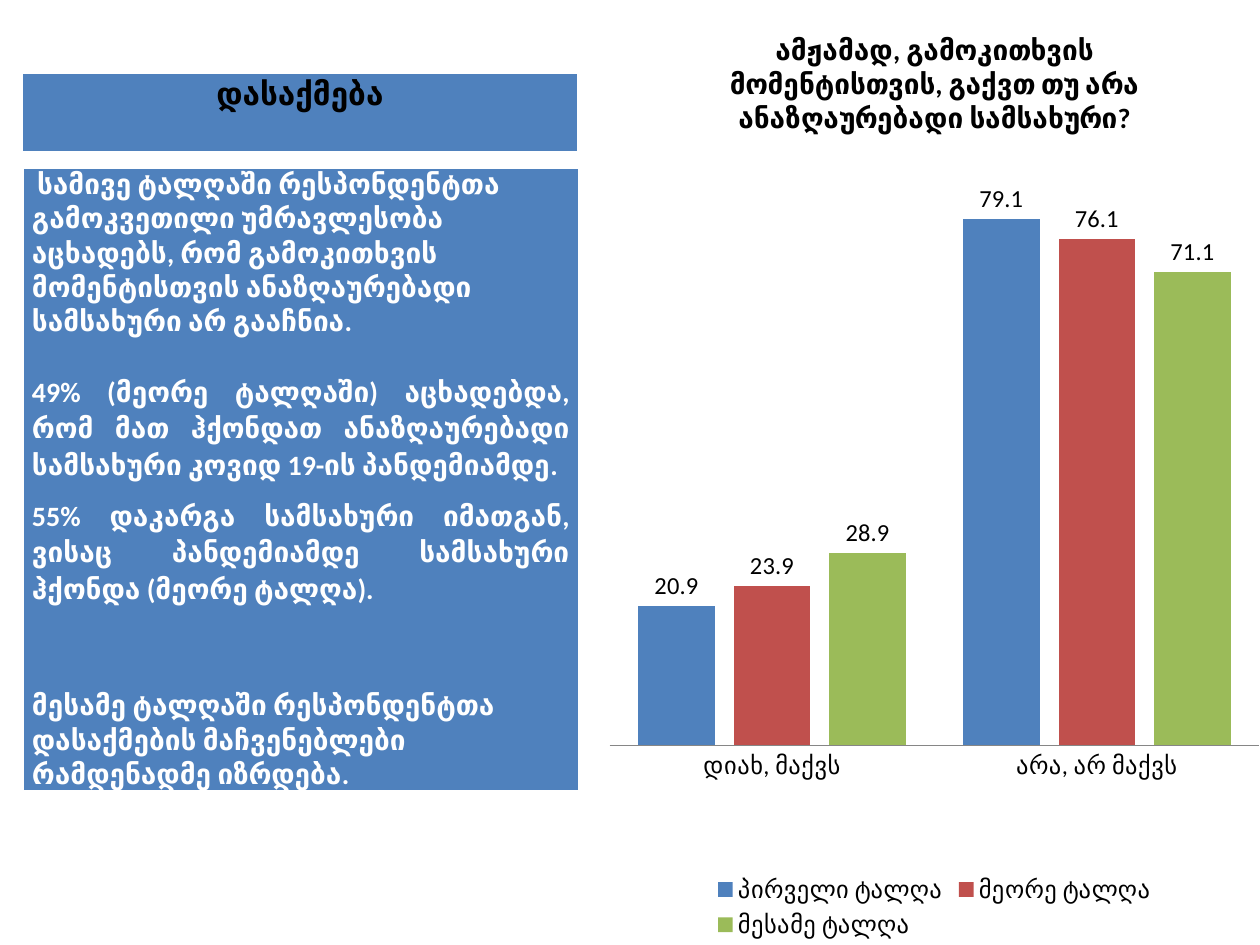
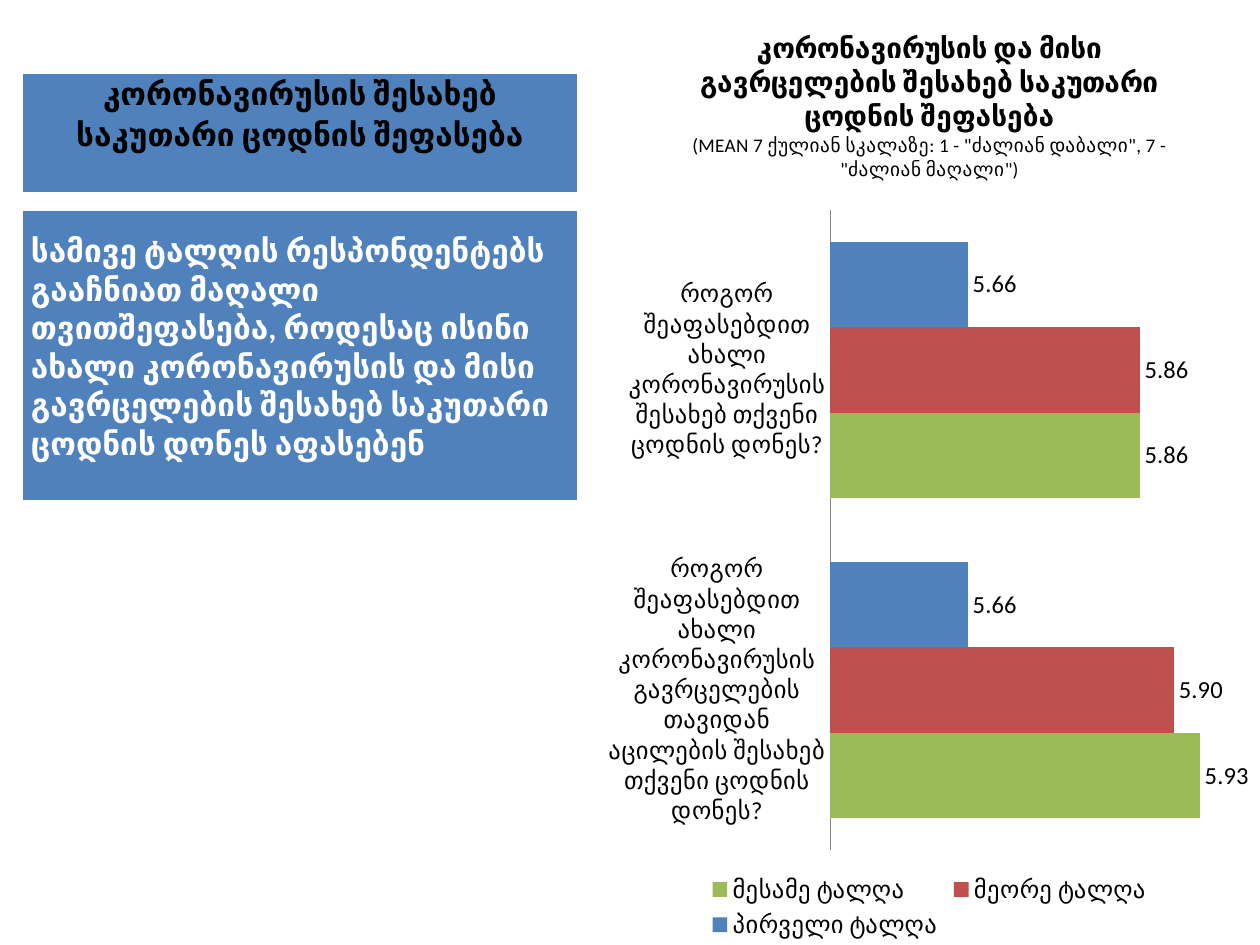
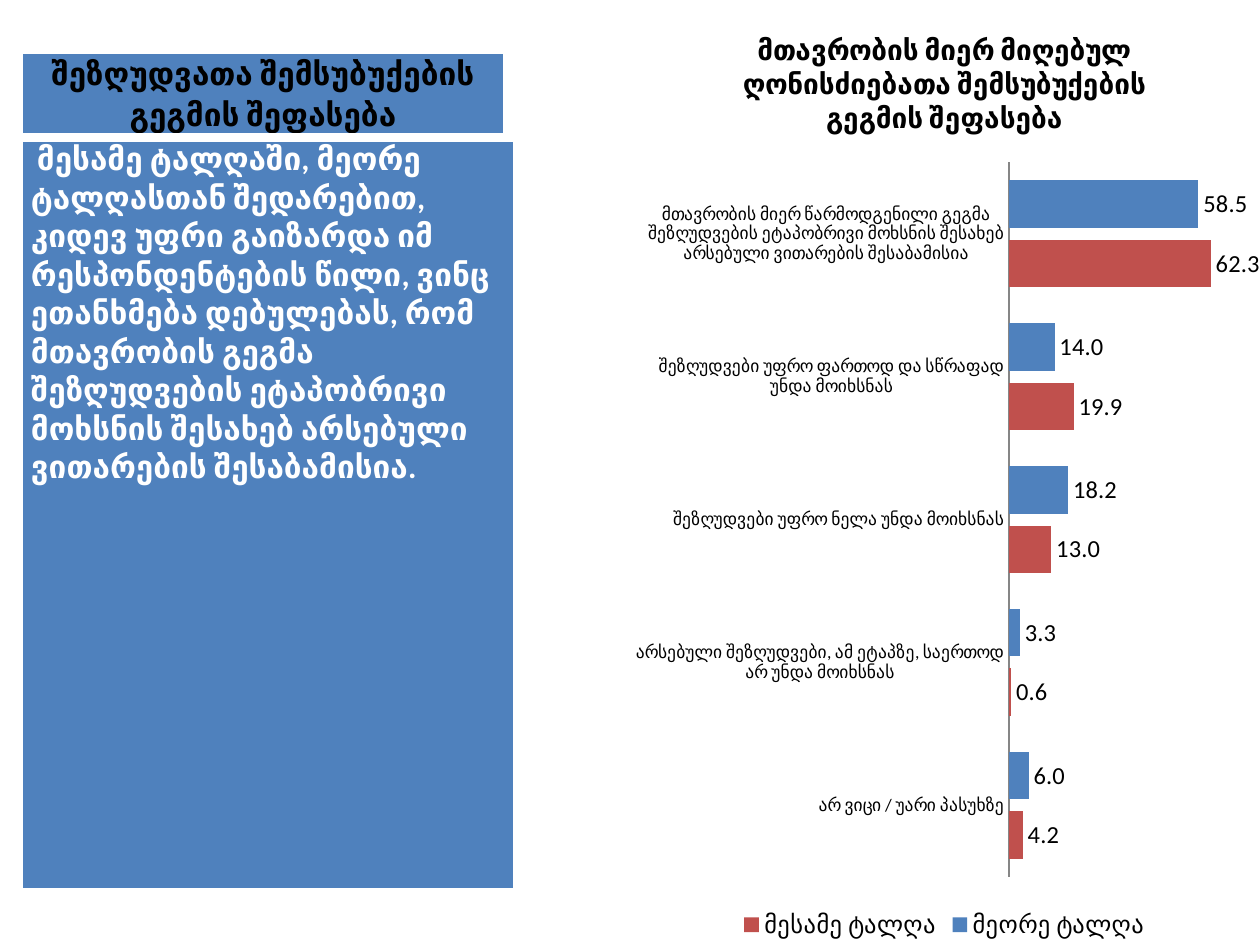
from pptx import Presentation
from pptx.chart.data import CategoryChartData
from pptx.dml.color import RGBColor
from pptx.enum.chart import (XL_CHART_TYPE, XL_LABEL_POSITION, XL_LEGEND_POSITION,
                             XL_TICK_LABEL_POSITION, XL_TICK_MARK)
from pptx.enum.text import PP_ALIGN
from pptx.oxml import parse_xml
from pptx.oxml.ns import nsdecls
from pptx.util import Emu, Pt

FONT = "Calibri"
BLUE, RED, GREEN = "4F81BD", "C0504D", "9BBB59"
BLACK, WHITE, GREY = "000000", "FFFFFF", "868686"
WAVES = {"პირველი ტალღა": BLUE, "მეორე ტალღა": RED, "მესამე ტალღა": GREEN}
EDGES = {"L": 1, "R": 1, "T": 1, "B": 3}


def px(n):
    return Emu(round(n * 914400 / 126))


def rgb(code):
    return RGBColor.from_string(code)


def style(font, size, color, bold=False):
    font.name, font.size, font.bold = FONT, Pt(size), bold
    font.color.rgb = rgb(color)


def add_cell(slide, box, top=0):
    """Add a one-cell blue table with white edges and return its text frame."""
    table = slide.shapes.add_table(1, 1, *map(px, box)).table
    table.first_row = table.horz_banding = False
    cell = table.cell(0, 0)
    props = cell._tc.get_or_add_tcPr()
    for side, width in EDGES.items():
        props.append(parse_xml(
            f'<a:ln{side} {nsdecls("a")} w="{Pt(width)}"><a:solidFill>'
            f'<a:srgbClr val="{WHITE}"/></a:solidFill></a:ln{side}>'))
    cell.fill.solid()
    cell.fill.fore_color.rgb = rgb(BLUE)
    cell.margin_left = cell.margin_right = px(9)
    cell.margin_top, cell.margin_bottom = px(top), 0
    return cell.text_frame


def add_head(slide, box, text):
    para = add_cell(slide, box).paragraphs[0]
    para.text = text
    para.alignment, para.line_spacing = PP_ALIGN.CENTER, 1.07
    style(para.runs[0].font, 18, BLACK, True)


def add_body(slide, box, items, size, top=0, indent=0):
    """Items are (text, justified, points before)."""
    frame = add_cell(slide, box, top)
    for i, (text, wide, before) in enumerate(items):
        para = frame.add_paragraph() if i else frame.paragraphs[0]
        para.text = text
        para.space_before = Pt(before)
        if wide:
            para.alignment, para.line_spacing = PP_ALIGN.JUSTIFY, 1.07
            para.space_after = Pt(8)
        style(para.runs[0].font, size, WHITE, True)
    if indent:
        frame.paragraphs[0]._p.get_or_add_pPr().set("indent", str(px(indent)))


def set_plot(chart, area):
    """Fix the inner plot area, given as fractions of the chart."""
    plot = chart.element.xpath("c:chart/c:plotArea")[0]
    for old in plot.xpath("c:layout"):
        plot.remove(old)
    sizes = "".join(f'<c:{k} val="{v}"/>' for k, v in zip("xywh", area))
    plot.insert(0, parse_xml(
        f'<c:layout {nsdecls("c")}><c:manualLayout><c:layoutTarget val="inner"/>'
        f'<c:xMode val="edge"/><c:yMode val="edge"/>{sizes}'
        '</c:manualLayout></c:layout>'))


def set_title(chart, title, note):
    frame = chart.chart_title.text_frame
    frame.text = title
    style(frame.paragraphs[0].runs[0].font, 16, BLACK, True)
    if note:
        para = frame.add_paragraph()
        para.text = note
        style(para.runs[0].font, 11, BLACK)


def set_axes(chart, low, high, rev, small, line):
    axis = chart.category_axis
    axis.major_tick_mark = axis.minor_tick_mark = XL_TICK_MARK.NONE
    axis.has_major_gridlines = False
    axis.reverse_order = rev
    axis.format.line.color.rgb = rgb(GREY)
    axis.format.line.width = Pt(line)
    style(axis.tick_labels.font, small, BLACK)
    scale = chart.value_axis
    scale.minimum_scale, scale.maximum_scale = low, high
    scale.has_major_gridlines = False
    scale.tick_label_position = XL_TICK_LABEL_POSITION.NONE
    scale.visible = False


def add_bars(slide, left, kind, title, cats, rows, colors, area, low, high,
             note="", form="###0.0", overlap=0, small=14, line=0.75):
    data = CategoryChartData(number_format=form)
    data.categories = cats
    for name, vals in rows.items():
        data.add_series(name, vals)
    chart = slide.shapes.add_chart(kind, px(left), 0, px(1260 - left), px(945), data).chart
    style(chart.font, 14, BLACK)
    set_title(chart, title, note)
    set_axes(chart, low, high, kind == XL_CHART_TYPE.BAR_CLUSTERED, small, line)
    set_plot(chart, area)
    chart.has_legend = True
    chart.legend.position = XL_LEGEND_POSITION.BOTTOM
    chart.legend.include_in_layout = False
    style(chart.legend.font, 14, BLACK)
    plot = chart.plots[0]
    plot.vary_by_categories = False
    plot.gap_width, plot.overlap = 75, overlap
    for row in plot.series:
        row.invert_if_negative = False
        row.format.fill.solid()
        row.format.fill.fore_color.rgb = rgb(colors[row.name])
        labels = row.data_labels
        labels.show_value = True
        labels.number_format, labels.number_format_is_linked = form, False
        labels.position = XL_LABEL_POSITION.OUTSIDE_END
        style(labels.font, 14, BLACK)


def add_jobs(slide):
    add_bars(slide, 609, XL_CHART_TYPE.COLUMN_CLUSTERED,
             "ამჟამად, გამოკითხვის მომენტისთვის, გაქვთ თუ არა ანაზღაურებადი სამსახური?",
             ["დიახ, მაქვს", "არა, არ მაქვს"],
             dict(zip(WAVES, [(20.9, 79.1), (23.9, 76.1), (28.9, 71.1)])),
             WAVES, (0, 0.155, 1, 0.634), 0, 90, overlap=-25)
    add_head(slide, (22, 73, 556, 80), "დასაქმება")
    add_body(slide, (23, 168, 556, 621), [
        ("სამივე ტალღაში რესპონდენტთა გამოკვეთილი უმრავლესობა აცხადებს, რომ "
         "გამოკითხვის მომენტისთვის ანაზღაურებადი სამსახური არ გააჩნია.", False, 0),
        ("49% (მეორე ტალღაში) აცხადებდა, რომ მათ ჰქონდათ ანაზღაურებადი სამსახური "
         "კოვიდ 19-ის პანდემიამდე.", True, 19.5),
        ("55% დაკარგა სამსახური იმათგან, ვისაც პანდემიამდე სამსახური ჰქონდა "
         "(მეორე ტალღა).", True, 0),
        ("მესამე ტალღაში რესპონდენტთა დასაქმების მაჩვენებლები რამდენადმე იზრდება.",
         False, 19.5 * 2),
    ], 16, indent=5)


def add_skill(slide):
    add_bars(slide, 599, XL_CHART_TYPE.BAR_CLUSTERED,
             "კორონავირუსის და მისი გავრცელების შესახებ საკუთარი ცოდნის შეფასება",
             ["როგორ შეაფასებდით ახალი კორონავირუსის შესახებ თქვენი ცოდნის დონეს?",
              "როგორ შეაფასებდით ახალი კორონავირუსის გავრცელების თავიდან აცილების "
              "შესახებ თქვენი ცოდნის დონეს?"],
             dict(zip(WAVES, [(5.66, 5.66), (5.86, 5.90), (5.86, 5.93)])),
             WAVES, (0.35, 0.222, 0.65, 0.678), 5.5, 6, form="###0.00",
             note='(MEAN 7 ქულიან სკალაზე: 1 - "ძალიან დაბალი", 7 - "ძალიან მაღალი")')
    add_head(slide, (22, 73, 556, 121), "კორონავირუსის შესახებ საკუთარი ცოდნის შეფასება")
    add_body(slide, (22, 210, 556, 292), [
        ("სამივე ტალღის რესპონდენტებს გააჩნიათ მაღალი თვითშეფასება, როდესაც ისინი "
         "ახალი კორონავირუსის და მისი გავრცელების შესახებ საკუთარი ცოდნის დონეს "
         "აფასებენ", False, 0),
    ], 18, top=23)


def add_plan(slide):
    add_bars(slide, 630, XL_CHART_TYPE.BAR_CLUSTERED,
             "მთავრობის მიერ მიღებულ ღონისძიებათა შემსუბუქების გეგმის შეფასება",
             ["მთავრობის მიერ წარმოდგენილი გეგმა შეზღუდვების ეტაპობრივი მოხსნის "
              "შესახებ არსებული ვითარების შესაბამისია",
              "შეზღუდვები უფრო ფართოდ და სწრაფად უნდა მოიხსნას",
              "შეზღუდვები უფრო ნელა უნდა მოიხსნას",
              "არსებული შეზღუდვები, ამ ეტაპზე, საერთოდ არ უნდა მოიხსნას",
              "არ ვიცი / უარი პასუხზე"],
             {"მეორე ტალღა": (58.5, 14, 18.2, 3.3, 6),
              "მესამე ტალღა": (62.3, 19.9, 13, 0.6, 4.2)},
             {"მეორე ტალღა": BLUE, "მესამე ტალღა": RED},
             (0.603, 0.172, 0.36, 0.756), 0, 70, overlap=-25, small=10, line=1.25)
    add_head(slide, (22, 53, 482, 81), "შეზღუდვათა შემსუბუქების გეგმის შეფასება")
    add_body(slide, (22, 141, 492, 749), [
        ("მესამე ტალღაში, მეორე ტალღასთან შედარებით, კიდევ უფრი გაიზარდა იმ "
         "რესპონდენტების წილი, ვინც ეთანხმება დებულებას, რომ მთავრობის გეგმა "
         "შეზღუდვების ეტაპობრივი მოხსნის შესახებ არსებული ვითარების შესაბამისია.",
         False, 0),
    ], 18, indent=6)


def main():
    deck = Presentation()
    deck.slide_width, deck.slide_height = px(1260), px(945)
    for build in (add_jobs, add_skill, add_plan):
        build(deck.slides.add_slide(deck.slide_layouts[6]))
    deck.save("out.pptx")


if __name__ == "__main__":
    main()
